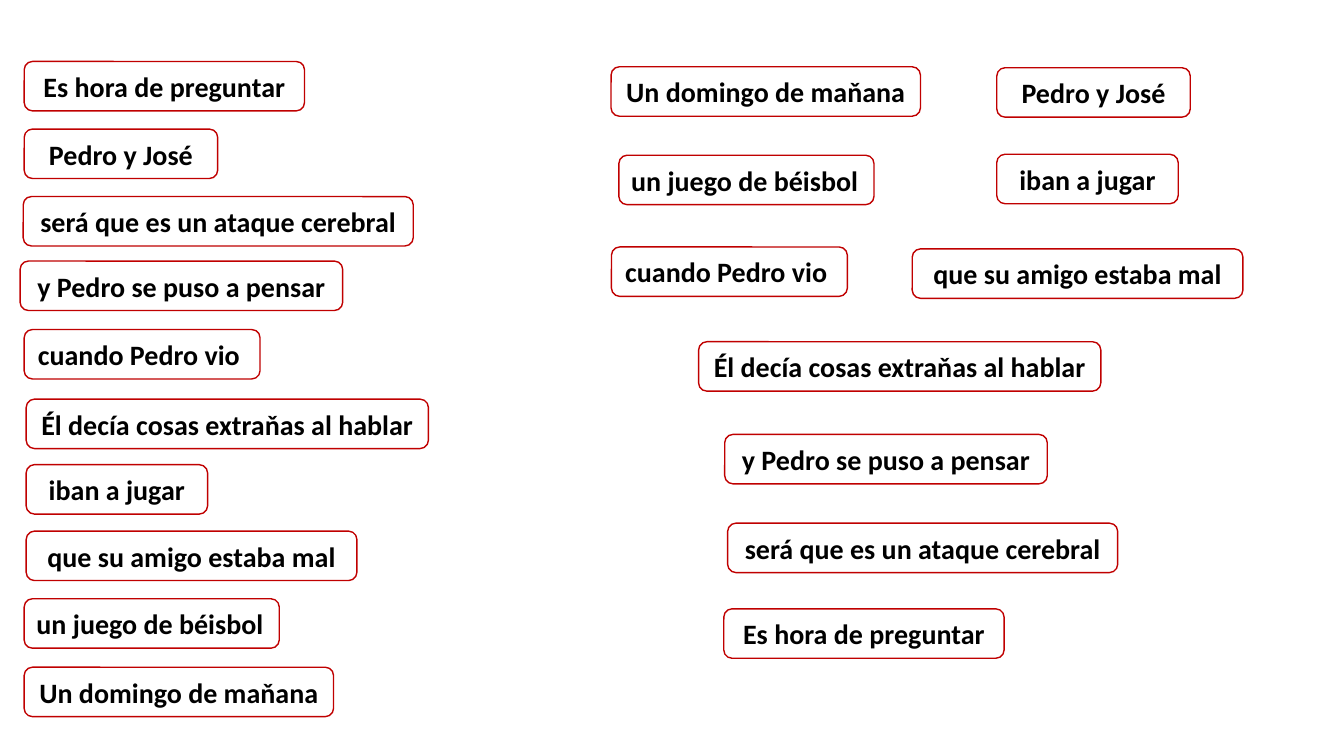
from pptx import Presentation
from pptx.util import Pt
from pptx.dml.color import RGBColor
from pptx.enum.shapes import MSO_SHAPE as Shape
from pptx.enum.text import PP_ALIGN as Align, MSO_ANCHOR as Anchor

SIZE = 960, 540
HIGH = 35.3
RED, WHITE, BLACK = "C00000", "FFFFFF", "000000"
FONT = {"name": "Calibri", "size": Pt(20), "bold": True}

# text, width, place in the list, place in the verse
LINES = [
    ("Un domingo de maňana", 221, (17.3, 476.6), (436.5, 47.7)),
    ("un juego de béisbol", 182.2, (17.3, 427.7), (442.1, 110.9)),
    ("iban a jugar", 129.6, (18.7, 331.9), (712, 110.2)),
    ("Pedro y José", 138.2, (17.3, 92.2), (712, 48.4)),
    ("cuando Pedro vio ", 168.5, (17.3, 235.4), (436.8, 176.4)),
    ("que su amigo estaba mal", 236.2, (18.7, 379.4), (651.6, 177.8)),
    ("y Pedro se puso a pensar", 230.4, (14.4, 186.5), (517.7, 310.3)),
    ("Él decía cosas extraňas al hablar", 287.3, (18.7, 285.1), (499, 244.1)),
    ("será que es un ataque cerebral", 278.6, (16.6, 140.4), (519.8, 373.7)),
    ("Es hora de preguntar", 200.2, (17.3, 43.9), (517, 434.9)),
]
LEFT = {"un juego de béisbol"}


def paint(color, code):
    color.rgb = RGBColor.from_string(code)


def card(slide, text, wide, spot):
    box = slide.shapes.add_shape(
        Shape.ROUNDED_RECTANGLE, *map(Pt, (*spot, wide, HIGH)))
    box.shadow.inherit = False
    box.fill.solid()
    paint(box.fill.fore_color, WHITE)
    paint(box.line.color, RED)
    box.line.width = Pt(1)
    frame = box.text_frame
    frame.word_wrap = True
    frame.vertical_anchor = Anchor.MIDDLE
    para = frame.paragraphs[0]
    para.alignment = Align.LEFT if text in LEFT else Align.CENTER
    run = para.add_run()
    run.text = text
    for key, value in FONT.items():
        setattr(run.font, key, value)
    paint(run.font.color, BLACK)


def main():
    deck = Presentation()
    deck.slide_width, deck.slide_height = map(Pt, SIZE)
    slide = deck.slides.add_slide(deck.slide_layouts[6])
    for side in range(2):
        for text, wide, *spots in LINES:
            card(slide, text, wide, spots[side])
    deck.save("out.pptx")


if __name__ == "__main__":
    main()
